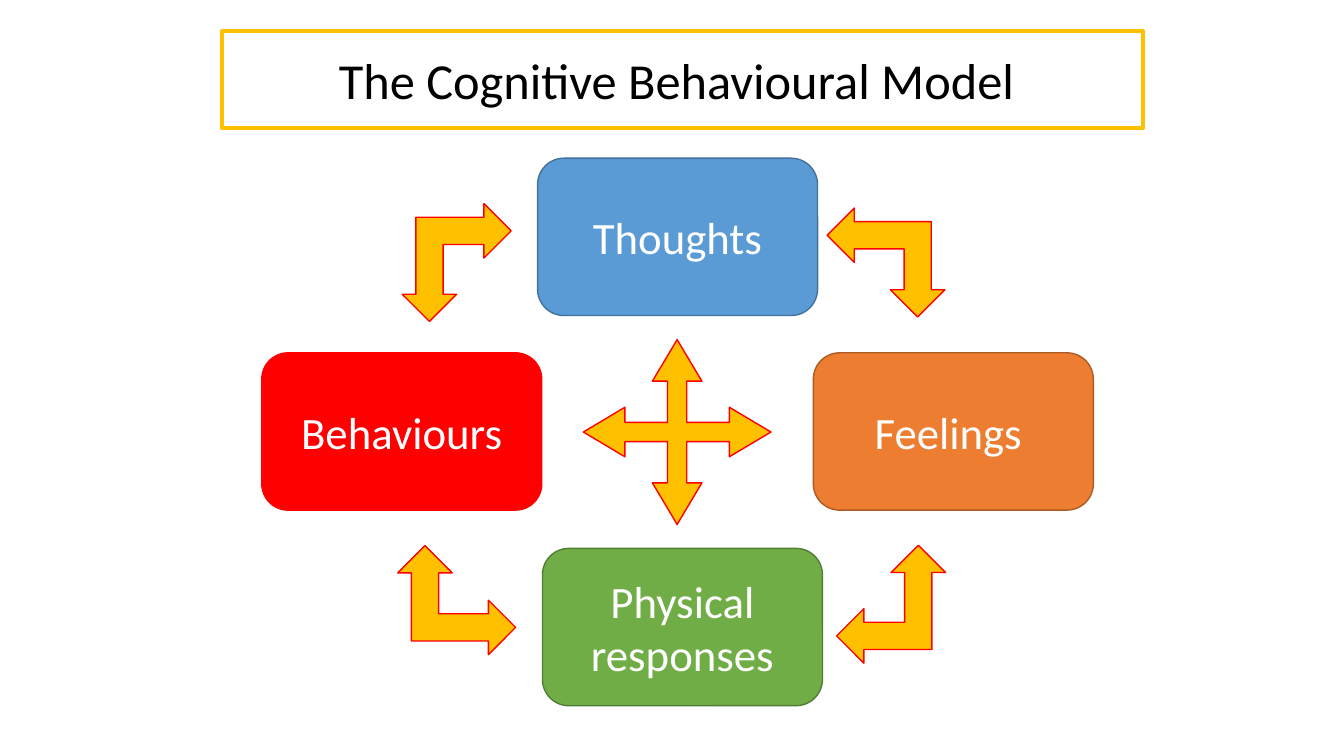
from dataclasses import dataclass

import lxml.etree
import pptx
import pptx.dml.color
import pptx.enum.shapes
import pptx.enum.text
import pptx.oxml.ns
import pptx.util

Pt = pptx.util.Pt
SHAPE = pptx.enum.shapes.MSO_SHAPE


@dataclass(frozen=True)
class Theme:
    font: str = "Calibri"
    title_size: int = 36
    box_size: int = 32
    black: str = "000000"
    white: str = "FFFFFF"
    gold: str = "FFC000"
    red: str = "FF0000"
    blue: str = "5B9BD5"
    blue_line: str = "42719B"
    orange: str = "ED7D31"
    orange_line: str = "AC5B23"
    green: str = "70AD47"
    green_line: str = "517E33"


THEME = Theme()
CORNER = 0.167
BOX_SIZE = (200, 112.4)
BENT_ARROW_SIZE = (77.8, 84.2)

# text, left, top, fill, line
BOXES = [
    ("Thoughts", 384, 113, THEME.blue, THEME.blue_line),
    ("Behaviours", 187, 252, THEME.red, THEME.red),
    ("Feelings ", 581, 252, THEME.orange, THEME.orange_line),
    ("Physical responses", 387.5, 391.7, THEME.green, THEME.green_line),
]
# left, top, rotation
BENT_ARROWS = [
    (597.6, 389.5, 0),
    (594, 145.4, 270),
    (287.3, 145.4, 180),
    (287.3, 386.6, 90),
]


def rgb(color):
    return pptx.dml.color.RGBColor.from_string(color)


def paint(shape, fill, line, width=1):
    shape.fill.solid()
    shape.fill.fore_color.rgb = rgb(fill)
    shape.line.color.rgb = rgb(line)
    shape.line.width = Pt(width)


def write(shape, text, size, color):
    frame = shape.text_frame
    frame.text = text
    frame.word_wrap = True
    frame.auto_size = pptx.enum.text.MSO_AUTO_SIZE.NONE
    frame.vertical_anchor = pptx.enum.text.MSO_ANCHOR.MIDDLE
    paragraph = frame.paragraphs[0]
    paragraph.alignment = pptx.enum.text.PP_ALIGN.CENTER
    font = paragraph.runs[0].font
    font.name = THEME.font
    font.size = Pt(size)
    font.color.rgb = rgb(color)


def add_painted_shape(slide, kind, left, top, size, fill, line):
    shape = slide.shapes.add_shape(kind, Pt(left), Pt(top), *map(Pt, size))
    shape.shadow.inherit = False
    paint(shape, fill, line)
    return shape


def add_box(slide, text, left, top, fill, line):
    box = add_painted_shape(slide, SHAPE.ROUNDED_RECTANGLE, left, top, BOX_SIZE, fill, line)
    box.adjustments[0] = CORNER
    write(box, text, THEME.box_size, THEME.white)


def add_arrow(slide, kind, left, top, size, rotation=0):
    arrow = add_painted_shape(slide, kind, left, top, size, THEME.gold, THEME.red)
    arrow.rotation = rotation
    return arrow


def round_corners(placeholder):
    """Give a placeholder that has a position, but no fill yet, a rounded outline."""
    qn = pptx.oxml.ns.qn
    properties = placeholder.element.spPr
    geometry = lxml.etree.SubElement(properties, qn("a:prstGeom"), prst="roundRect")
    guides = lxml.etree.SubElement(geometry, qn("a:avLst"))
    lxml.etree.SubElement(guides, qn("a:gd"), name="adj", fmla=f"val {round(CORNER * 100000)}")


def set_title(slide, text):
    title = slide.shapes.title
    title.left, title.top, title.width, title.height = map(Pt, (158.4, 22.3, 658, 69.2))
    round_corners(title)
    paint(title, THEME.white, THEME.gold, 3)
    write(title, text, THEME.title_size, THEME.black)


def main():
    presentation = pptx.Presentation()
    presentation.slide_width, presentation.slide_height = Pt(960), Pt(540)
    slide = presentation.slides.add_slide(presentation.slide_layouts.get_by_name("Title Only"))

    set_title(slide, "The Cognitive Behavioural Model ")
    for box in BOXES:
        add_box(slide, *box)

    cross = add_arrow(slide, SHAPE.QUAD_ARROW, 416.7, 242.6, (134, 132))
    for index, adjustment in enumerate((0.104, 0.134, 0.225)):
        cross.adjustments[index] = adjustment
    for left, top, rotation in BENT_ARROWS:
        add_arrow(slide, SHAPE.LEFT_UP_ARROW, left, top, BENT_ARROW_SIZE, rotation)

    presentation.save("out.pptx")


if __name__ == "__main__":
    main()
